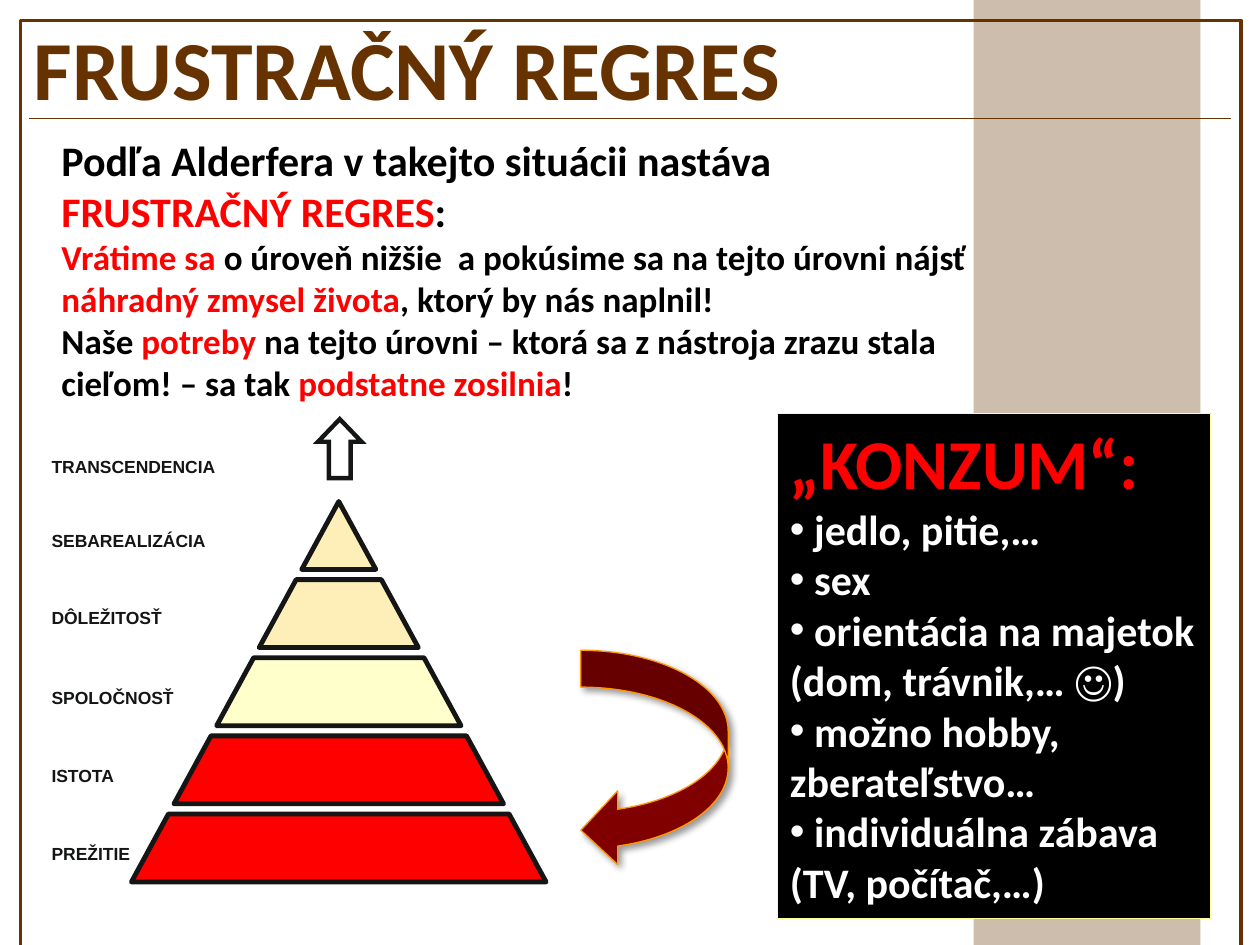
from lxml.etree import SubElement
from pptx import Presentation
from pptx.dml.color import RGBColor
from pptx.enum.shapes import MSO_CONNECTOR, MSO_SHAPE
from pptx.enum.text import MSO_ANCHOR, MSO_AUTO_SIZE, PP_ALIGN
from pptx.oxml import parse_xml
from pptx.oxml.ns import nsdecls, qn
from pptx.util import Cm, Pt

BROWN, RED, BLACK, WHITE, INK = "663300", "FF0000", "000000", "FFFFFF", "141515"


def rgb(value):
    return RGBColor.from_string(value)


def format_runs(paragraph, size, font_name, *colours):
    for run, colour in zip(paragraph.runs, colours):
        run.font.size = Pt(size)
        run.font.name = font_name
        run.font.bold = True
        run.font.color.rgb = rgb(colour)


presentation = Presentation()
presentation.slide_width, presentation.slide_height = Cm(25.4), Cm(19.05)
slide = presentation.slides.add_slide(presentation.slide_layouts[1])
shapes = slide.shapes
title, consumption = slide.placeholders

# Translucent vertical band and page frame, behind the placeholders
band = shapes.add_shape(MSO_SHAPE.RECTANGLE, Cm(19.63), 0, Cm(4.57), Cm(19.05))
band.shadow.inherit = False
band.fill.solid()
band.fill.fore_color.rgb = rgb(BROWN)
band_colour = band.fill._xPr.find(qn("a:solidFill"))[0]
SubElement(band_colour, qn("a:alpha"), val="32000")
band.line.fill.background()

frame = shapes.add_shape(MSO_SHAPE.RECTANGLE, Cm(0.41), Cm(0.41), Cm(24.61), Cm(18.67))
frame.shadow.inherit = False
frame.fill.background()
frame.line.color.rgb = rgb(BROWN)
frame.line.width = Pt(2)
for position, shape in enumerate((band, frame), start=2):
    shapes._spTree.insert(position, shape._element)

# Title and the rule under it
title.left, title.top, title.width, title.height = Cm(0.43), Cm(0.2), Cm(24.59), Cm(2.31)
title.text_frame.text = "FRUSTRAČNÝ REGRES"
title.text_frame.auto_size = MSO_AUTO_SIZE.NONE
title.text_frame.vertical_anchor = MSO_ANCHOR.TOP
title.text_frame.paragraphs[0].alignment = PP_ALIGN.LEFT
format_runs(title.text_frame.paragraphs[0], 48, "Calibri", BROWN)

rule = shapes.add_connector(MSO_CONNECTOR.STRAIGHT, Cm(0.58), Cm(2.39), Cm(24.82), Cm(2.39))
rule.line.color.rgb = rgb(BROWN)
rule.line.width = Pt(0.75)
SubElement(rule._element.spPr, qn("a:effectLst"))

# Explanation with highlighted phrases
explanation = [
    (24, [("Podľa Alderfera v takejto situácii nastáva ", BLACK),
          ("FRUSTRAČNÝ REGRES", RED), (":", BLACK)]),
    (20, [("Vrátime sa ", RED),
          ("o úroveň nižšie  a pokúsime sa na tejto úrovni nájsť ", BLACK),
          ("náhradný zmysel života", RED), (", ktorý by nás naplnil!", BLACK)]),
    (20, [("Naše ", BLACK), ("potreby ", RED),
          ("na tejto úrovni – ktorá sa z nástroja zrazu stala cieľom! – sa tak ", BLACK),
          ("podstatne zosilnia", RED), ("!", BLACK)]),
]
text_box = shapes.add_textbox(Cm(0.99), Cm(2.59), Cm(19.46), Cm(5.74))
text_frame = text_box.text_frame
text_frame.word_wrap = True
for index, (size, parts) in enumerate(explanation):
    paragraph = text_frame.add_paragraph() if index else text_frame.paragraphs[0]
    for text, _ in parts:
        paragraph.add_run().text = text
    format_runs(paragraph, size, "Calibri", *[colour for _, colour in parts])

# Pyramid: five tiers cut from one triangle
apex_x, apex_y, slope = 6.83, 10.11, 0.545
tier_height, tier_pitch = 1.37, 1.575
for index, colour in enumerate(["FEEFB8", "FEEFB8", "FFFFCC", RED, RED]):
    top = apex_y + index * tier_pitch
    bottom = top + tier_height
    upper, lower = slope * (top - apex_y), slope * (bottom - apex_y)
    corners = [(apex_x + upper, top), (apex_x + lower, bottom), (apex_x - lower, bottom)]
    builder = shapes.build_freeform(Cm(apex_x - upper), Cm(top))
    builder.add_line_segments([(Cm(x), Cm(y)) for x, y in corners])
    tier = builder.convert_to_shape()
    tier.shadow.inherit = False
    tier.fill.solid()
    tier.fill.fore_color.rgb = rgb(colour)
    tier.line.color.rgb = rgb(INK)
    tier.line.width = Pt(2.75)

# Level names
levels = [("TRANSCENDENCIA", 9.19), ("SEBAREALIZÁCIA", 10.69), ("DÔLEŽITOSŤ", 12.24),
          ("SPOLOČNOSŤ", 13.84), ("ISTOTA", 15.42), ("PREŽITIE", 16.99)]
for name, top in levels:
    label = shapes.add_textbox(Cm(1.04), Cm(top), Cm(3.33), Cm(0.48))
    text_frame = label.text_frame
    text_frame.margin_left = text_frame.margin_right = 0
    text_frame.margin_top = text_frame.margin_bottom = 0
    text_frame.word_wrap = False
    text_frame.text = name
    format_runs(text_frame.paragraphs[0], 10, "Arial", INK)

# Hollow arrow above the apex
up_arrow = shapes.add_shape(MSO_SHAPE.UP_ARROW, Cm(6.41), Cm(8.45), Cm(0.88), Cm(1.19))
up_arrow.adjustments[0], up_arrow.adjustments[1] = 0.5, 0.52
up_arrow.shadow.inherit = False
up_arrow.fill.background()
up_arrow.line.color.rgb = rgb(INK)
up_arrow.line.width = Pt(2.5)
SubElement(up_arrow.line._ln, qn("a:miter"), lim="800000")

# Consumption list
consumption.left, consumption.top = Cm(15.67), Cm(8.33)
consumption.width, consumption.height = Cm(8.74), Cm(10.19)
consumption.fill.solid()
consumption.fill.fore_color.rgb = rgb(BLACK)
consumption.line.color.rgb = rgb("FFFF99")
consumption.line.width = Pt(0.75)
text_frame = consumption.text_frame
text_frame.auto_size = MSO_AUTO_SIZE.NONE
items = ["„KONZUM“:", " jedlo, pitie,…", " sex", " orientácia na majetok (dom, trávnik,… ☺)",
         " možno hobby, zberateľstvo…", " individuálna zábava (TV, počítač,…)"]
for index, item in enumerate(items):
    paragraph = text_frame.add_paragraph() if index else text_frame.paragraphs[0]
    paragraph.text = item
    paragraph.space_before = Pt(0)
    properties = paragraph._p.get_or_add_pPr()
    properties.set("marL", "0")
    properties.set("indent", "0")
    if index:
        SubElement(properties, qn("a:buChar"), char="•")
        format_runs(paragraph, 24, "Calibri", WHITE)
    else:
        SubElement(properties, qn("a:buNone"))
        format_runs(paragraph, 40, "Calibri", RED)

# Curved arrow back down the pyramid
return_arrow = shapes.add_shape(MSO_SHAPE.CURVED_LEFT_ARROW, Cm(11.71), Cm(13.11), Cm(2.97), Cm(4.37))
return_arrow.fill.solid()
return_arrow.fill.fore_color.rgb = rgb("800000")
return_arrow.line.color.rgb = rgb("FF9900")
return_arrow.line.width = Pt(0.75)
return_arrow._element.spPr.append(parse_xml(
    f'<a:effectLst {nsdecls("a")}><a:outerShdw blurRad="{Pt(4)}" dist="{Pt(3)}" dir="2700000">'
    '<a:srgbClr val="000000"><a:alpha val="40000"/></a:srgbClr></a:outerShdw></a:effectLst>'))

presentation.save("out.pptx")
